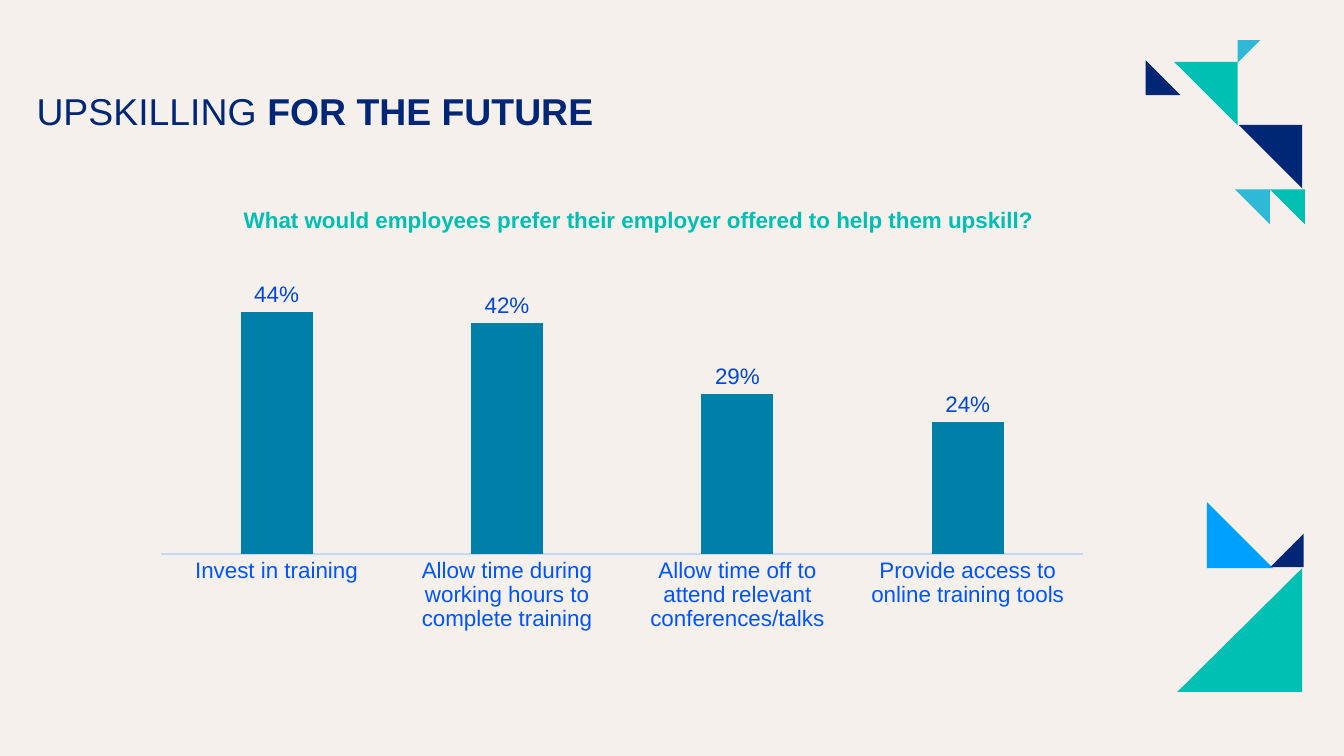
"""Build the slide on upskilling, with its column chart and triangle ornaments."""
from pptx import Presentation
from pptx.chart.data import CategoryChartData
from pptx.dml.color import RGBColor
from pptx.enum import chart as charts, text
from pptx.util import Cm, Pt

COLORS = {
    "paper": "F5F0EB", "navy": "002776", "teal": "00BFB3", "sky": "2EBAD7",
    "azure": "00A0FF", "bar": "007FA9", "axis": "C4D8FF",
    "category": "0054FF", "value": "0047D8",
}
TRIANGLES = [
    ("azure", 22.81, 10.74, 1.25, -1.25),
    ("teal", 24.61, 13.08, -2.36, -2.34),
    ("navy", 24.64, 10.72, -0.63, -0.63),
    ("navy", 21.65, 1.8, 0.66, -0.66),
    ("sky", 24, 3.58, -0.66, 0.66),
    ("teal", 24.66, 3.58, -0.66, 0.66),
    ("teal", 23.39, 1.17, -1.2, 1.2),
    ("sky", 23.39, 0.76, 0.43, 0.43),
    ("navy", 24.61, 2.36, -1.2, 1.2),
]
ANSWERS = {
    "Invest in training": 0.44,
    "Allow time during working hours to complete training": 0.42,
    "Allow time off to attend relevant conferences/talks": 0.29,
    "Provide access to online training tools": 0.24,
}


def paint(fill, color):
    fill.solid()
    fill.fore_color.rgb = RGBColor.from_string(COLORS[color])


def style_font(font, size, color):
    font.name = "Arial"
    font.size = Pt(size)
    font.color.rgb = RGBColor.from_string(COLORS[color])


def place(shape, left, top, width, height):
    shape.left, shape.top = Cm(left), Cm(top)
    shape.width, shape.height = Cm(width), Cm(height)


def prepare_frame(shape):
    frame = shape.text_frame
    frame.margin_left = frame.margin_top = 0
    frame.margin_right = frame.margin_bottom = 0
    frame.word_wrap = True
    frame.auto_size = text.MSO_AUTO_SIZE.NONE
    frame.vertical_anchor = text.MSO_ANCHOR.TOP
    return frame.paragraphs[0]


def add_triangle(page, color, x, y, across, down):
    builder = page.shapes.build_freeform(Cm(x), Cm(y))
    builder.add_line_segments([(Cm(x + across), Cm(y)), (Cm(x), Cm(y + down))])
    triangle = builder.convert_to_shape()
    triangle.shadow.inherit = False
    paint(triangle.fill, color)
    triangle.line.fill.background()


def write_title(page):
    title = page.shapes.title
    place(title, 0.69, 1.8, 21.62, 1.32)
    para = prepare_frame(title)
    para.alignment = text.PP_ALIGN.LEFT
    para.line_spacing = 0.85
    style_font(para.font, 20, "navy")
    for words, bold in (("UPSKILLING ", False), ("FOR THE FUTURE", True)):
        span = para.add_run()
        span.text = words
        span.font.bold = bold


def add_question(page):
    box = page.shapes.add_textbox(Cm(2.69), Cm(3.89), Cm(18.77), Cm(1.32))
    para = prepare_frame(box)
    para.text = "What would employees prefer their employer offered to help them upskill?"
    para.alignment = text.PP_ALIGN.CENTER
    para.space_after = Pt(6)
    style_font(para.font, 12, "teal")
    para.font.bold = True


def add_answer_chart(page):
    data = CategoryChartData(number_format="0%")
    data.categories = list(ANSWERS)
    data.add_series("Series 1", list(ANSWERS.values()))
    chart = page.shapes.add_chart(
        charts.XL_CHART_TYPE.COLUMN_CLUSTERED,
        Cm(2.69), Cm(5.13), Cm(18.14), Cm(6.93), data).chart
    style_font(chart.font, 10, "navy")
    chart.has_legend = chart.has_title = False

    value_axis = chart.value_axis
    value_axis.visible = False
    value_axis.has_major_gridlines = False
    value_axis.minimum_scale, value_axis.maximum_scale = 0, 0.5

    category_axis = chart.category_axis
    category_axis.major_tick_mark = charts.XL_TICK_MARK.NONE
    category_axis.format.line.width = Pt(0.75)
    paint(category_axis.format.line.fill, "axis")
    style_font(category_axis.tick_labels.font, 12, "category")

    plot = chart.plots[0]
    plot.gap_width, plot.overlap = 219, -27
    plot.vary_by_categories = False
    series = plot.series[0]
    paint(series.format.fill, "bar")
    labels = series.data_labels
    labels.show_value = True
    labels.position = charts.XL_LABEL_POSITION.OUTSIDE_END
    labels.number_format, labels.number_format_is_linked = "0%", False
    style_font(labels.font, 12, "value")


def main():
    deck = Presentation()
    deck.slide_width, deck.slide_height = Cm(25.4), Cm(14.29)
    page = deck.slides.add_slide(deck.slide_layouts[5])
    paint(page.background.fill, "paper")
    for triangle in TRIANGLES:
        add_triangle(page, *triangle)
    write_title(page)
    add_answer_chart(page)
    add_question(page)
    deck.save("out.pptx")


if __name__ == "__main__":
    main()
